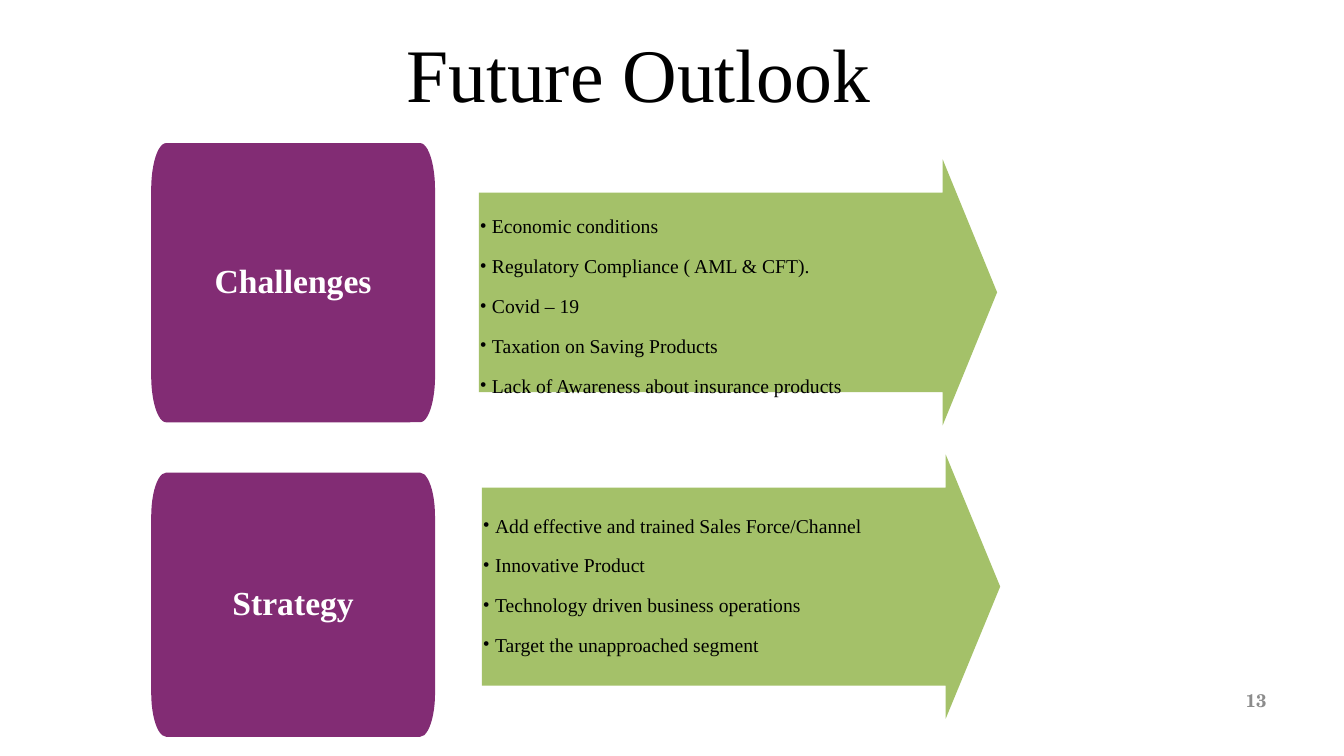
"""Build the Future Outlook slide: two topics, each with an arrow of points."""
from lxml import etree
from pptx import Presentation
from pptx.dml.color import RGBColor
from pptx.enum.shapes import MSO_SHAPE
from pptx.enum.text import MSO_ANCHOR, PP_ALIGN
from pptx.oxml.ns import qn
from pptx.util import Inches, Pt

TOP, MIDDLE = MSO_ANCHOR.TOP, MSO_ANCHOR.MIDDLE
LEFT, CENTER, RIGHT = PP_ALIGN.LEFT, PP_ALIGN.CENTER, PP_ALIGN.RIGHT
RIGHT_ARROW = MSO_SHAPE.RIGHT_ARROW
SERIF, SCHOLA = "Times New Roman", "TeX Gyre Schola"
COLORS = {"topic": "822C74", "arrow": "9BBB59", "ink": "000000",
          "white": "FFFFFF", "page": "8C8C8C"}

deck = Presentation()
deck.slide_width, deck.slide_height = Inches(13.33), Inches(7.5)
COL, ROW = deck.slide_width / 100, deck.slide_height / 100
slide = deck.slides.add_slide(deck.slide_layouts[6])


def write(frame, lines, size, color, align, anchor, margins,
          face=SERIF, bold=False, spacing=1.0, bullets=False):
    """Fill a text frame with one paragraph for each line."""
    frame.word_wrap = True
    frame.vertical_anchor = anchor
    frame.margin_left, frame.margin_top, frame.margin_right, frame.margin_bottom = map(Inches, margins)
    for number, line in enumerate(lines):
        paragraph = frame.paragraphs[0] if number == 0 else frame.add_paragraph()
        paragraph.text = line
        paragraph.alignment = align
        paragraph.line_spacing = spacing
        if bullets:
            paragraph.space_after = Pt(3.2)
            props = paragraph._p.get_or_add_pPr()
            props.set("marL", str(Inches(0.12)))
            props.set("indent", str(-Inches(0.12)))
            etree.SubElement(props, qn("a:buFont")).set("typeface", face)
            etree.SubElement(props, qn("a:buChar")).set("char", "•")
        font = paragraph.font
        font.name, font.size, font.bold = face, Pt(size), bold
        font.color.rgb = RGBColor.from_string(COLORS[color])


def paint(shape, color):
    """Give a shape a plain fill without line or shadow."""
    shape.shadow.inherit = False
    shape.line.fill.background()
    shape.fill.solid()
    shape.fill.fore_color.rgb = RGBColor.from_string(COLORS[color])


title = slide.shapes.add_textbox(15 * COL, 3.5 * ROW, 65 * COL, 9 * ROW)
write(title.text_frame, ["Future Outlook"], 54, "ink", CENTER, TOP, (0, 0, 0, 0))

page = slide.shapes.add_textbox(71.64 * COL, 90 * ROW, 23.33 * COL, 5.33 * ROW)
write(page.text_frame, ["13"], 13, "page", RIGHT, MIDDLE, (0.1, 0.05, 0.1, 0.05), SCHOLA, True)

topics = [
    {"name": "Challenges", "top": 18.93, "height": 36.93,
     "arrow": (35.63, 21.07, 35.2), "inset": 0.1,
     "points": ["Economic conditions", "Regulatory Compliance ( AML & CFT).", "Covid – 19",
                "Taxation on Saving Products", "Lack of Awareness about insurance products"]},
    {"name": "Strategy", "top": 62.53, "height": 34.93,
     "arrow": (35.86, 60.13, 34.93), "inset": 0.14,
     "points": ["Add effective and trained Sales Force/Channel", "Innovative Product",
                "Technology driven business operations", "Target the unapproached segment"]},
]
topic_left, topic_width = round(11.25 * COL), round(21.12 * COL)
topic_right = topic_left + topic_width
arrow_width, head_length = 38.56 * COL, 4.05 * COL

for topic in topics:
    left, top, height = topic["arrow"]
    arrow = slide.shapes.add_shape(RIGHT_ARROW, left * COL, top * ROW, arrow_width, height * ROW)
    arrow.adjustments[0] = 0.75
    arrow.adjustments[1] = head_length / (height * ROW)
    paint(arrow, "arrow")
    tint = arrow._element.spPr.find(qn("a:solidFill"))[0]
    etree.SubElement(tint, qn("a:alpha")).set("val", "90000")
    write(arrow.text_frame, topic["points"], 14, "ink", LEFT, TOP,
          (0.01, topic["inset"], 0, 0), spacing=1.5, bullets=True)

    topic_top, topic_height = round(topic["top"] * ROW), round(topic["height"] * ROW)
    topic_bottom = topic_top + topic_height
    radius_x, radius_y = topic_width // 19, topic_height // 6
    builder = slide.shapes.build_freeform(topic_left, topic_top + radius_y)
    builder.add_line_segments([
        (topic_left + radius_x, topic_top), (topic_right - radius_x, topic_top),
        (topic_right, topic_top + radius_y), (topic_right, topic_bottom - radius_y),
        (topic_right - radius_x, topic_bottom), (topic_left + radius_x, topic_bottom),
        (topic_left, topic_bottom - radius_y)], close=True)
    label = builder.convert_to_shape()
    corners = list(label._element.iter(qn("a:lnTo")))[::2]
    for corner, start in zip(corners, (180, 270, 0, 90)):
        arc = etree.Element(qn("a:arcTo"), wR=str(radius_x), hR=str(radius_y),
                            stAng=str(start * 60000), swAng=str(90 * 60000))
        corner.getparent().replace(corner, arc)
    paint(label, "topic")
    write(label.text_frame, [topic["name"]], 24, "white", CENTER, MIDDLE,
          (0.22, 0.14, 0.22, 0.14), bold=True, spacing=0.9)

deck.save("out.pptx")
